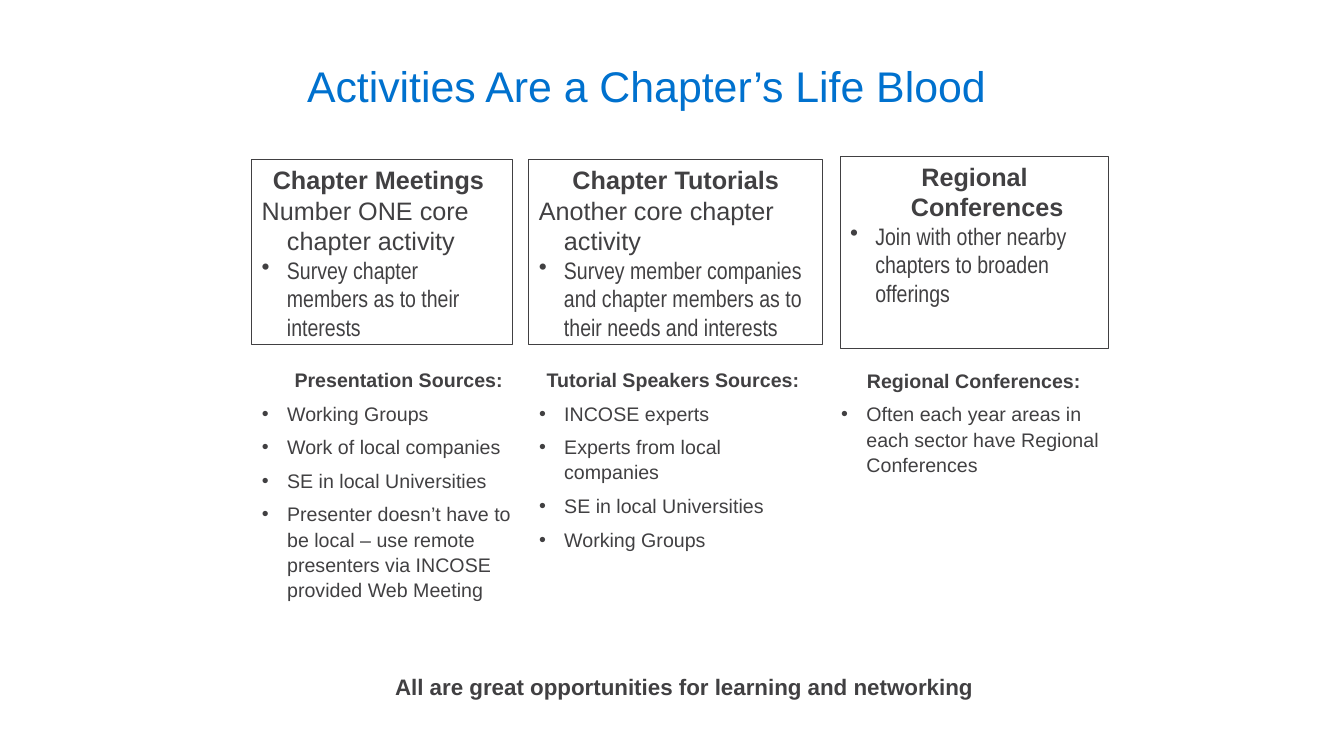
import pptx
import pptx.dml.color
import pptx.enum.shapes
import pptx.enum.text
import pptx.oxml
import pptx.oxml.ns
import pptx.util

Pt = pptx.util.Pt
ALIGN = pptx.enum.text.PP_ALIGN
ANCHOR = pptx.enum.text.MSO_ANCHOR
BLUE = pptx.dml.color.RGBColor(0x00, 0x71, 0xCE)
GRAY = pptx.dml.color.RGBColor(0x41, 0x40, 0x42)
WHITE = pptx.dml.color.RGBColor(0xFF, 0xFF, 0xFF)

# Each column: card place, card lines, list place, list heading, list items
COLUMNS = [
    ((180, 114, 186, 132), "Chapter Meetings ", "Number ONE core chapter activity",
     "Survey chapter members as to their interests",
     (180, 258, 210, 177), "Presentation Sources:",
     ["Working Groups", "Work of local companies", "SE in local Universities",
      "Presenter doesn’t have to be local – use remote presenters via INCOSE "
      "provided Web Meeting"]),
    ((378, 114, 210, 132), "Chapter Tutorials", "Another core chapter activity",
     "Survey member companies and chapter members as to their needs and interests",
     (378, 258, 210, 189), "Tutorial Speakers Sources: ",
     ["INCOSE experts", "Experts from local companies", "SE in local Universities",
      "Working Groups"]),
    ((600.5, 111.5, 192, 137.5), "Regional Conferences", None,
     "Join with other nearby chapters to broaden offerings",
     (594, 258.5, 204, 110), "Regional Conferences:",
     ["Often each year areas in each sector have Regional Conferences"]),
]


class Deck:
    font = "Arial"
    narrow = "Arial Narrow"
    hang = 18

    def __init__(self, width, height):
        self.prs = pptx.Presentation()
        self.prs.slide_width, self.prs.slide_height = Pt(width), Pt(height)

    def add_slide(self, layout):
        self.s = self.prs.slides.add_slide(self.prs.slide_layouts.get_by_name(layout))
        self.s.background.fill.solid()
        self.s.background.fill.fore_color.rgb = WHITE

    def frame(self, sp, anchor=ANCHOR.TOP, inset=(7.2, 3.6)):
        """Return the shape's text frame, wrapped and with fixed insets."""
        tf = sp.text_frame
        tf.word_wrap = True
        tf.auto_size = pptx.enum.text.MSO_AUTO_SIZE.NONE
        tf.vertical_anchor = anchor
        tf.margin_left = tf.margin_right = Pt(inset[0])
        tf.margin_top = tf.margin_bottom = Pt(inset[1])
        return tf

    def paragraph(self, tf, text, size, bold=False, align=ALIGN.LEFT, bullet=False,
                  font=None, color=GRAY, hang=0, line=1.0, after=0):
        p = tf.paragraphs[0]
        if p.runs:
            p = tf.add_paragraph()
        pPr = p._p.get_or_add_pPr()
        pPr.set("marL", str(Pt(hang)))
        pPr.set("indent", str(-Pt(hang)))
        mark = pptx.oxml.parse_xml(
            f'<a:{"buChar" if bullet else "buNone"} {pptx.oxml.ns.nsdecls("a")}/>')
        if bullet:
            mark.set("char", "•")
        pPr.append(mark)
        p.alignment = align
        p.line_spacing, p.space_before, p.space_after = line, Pt(0), Pt(after)
        r = p.add_run()
        r.text = text
        r.font.name, r.font.size, r.font.bold = font or self.font, Pt(size), bold
        r.font.color.rgb = color

    def placeholder(self, idx, place):
        sp = self.s.placeholders[idx]
        sp.left, sp.top, sp.width, sp.height = map(Pt, place)
        return sp

    def title(self, text, place):
        tf = self.frame(self.placeholder(0, place), ANCHOR.BOTTOM, (9.4, 5))
        self.paragraph(tf, text, 30.6, color=BLUE)

    def card(self, place, heading, lead, point):
        sp = self.s.shapes.add_shape(pptx.enum.shapes.MSO_SHAPE.RECTANGLE, *map(Pt, place))
        sp.shadow.inherit = False
        sp.fill.background()
        sp.line.color.rgb, sp.line.width = GRAY, Pt(0.75)
        tf = self.frame(sp)
        self.paragraph(tf, heading, 18, True, ALIGN.CENTER, hang=self.hang)
        if lead:
            self.paragraph(tf, lead, 18, hang=self.hang)
        self.paragraph(tf, point, 17, bullet=True, font=self.narrow, hang=self.hang)

    def bullet_list(self, idx, place, heading, items):
        tf = self.frame(self.placeholder(idx, place))
        style = dict(hang=self.hang, line=Pt(18), after=6)
        self.paragraph(tf, heading, 14, True, ALIGN.CENTER, **style)
        for item in items:
            self.paragraph(tf, item, 14, bullet=True, **style)

    def closing(self, idx, place, text):
        tf = self.frame(self.placeholder(idx, place))
        self.paragraph(tf, text, 16, True, ALIGN.CENTER, line=Pt(18), after=6)


def main():
    deck = Deck(960.5, 540)
    deck.add_slide("Comparison")
    deck.title("Activities Are a Chapter’s Life Blood", (210, 36.5, 630, 48))
    for idx, column in enumerate(COLUMNS, 1):
        card_place, heading, lead, point, list_place, list_heading, items = column
        deck.card(card_place, heading, lead, point)
        deck.bullet_list(idx, list_place, list_heading, items)
    deck.closing(4, (192, 478.5, 594, 25),
                 "All are great opportunities for learning and networking")
    deck.prs.save("out.pptx")


if __name__ == "__main__":
    main()
